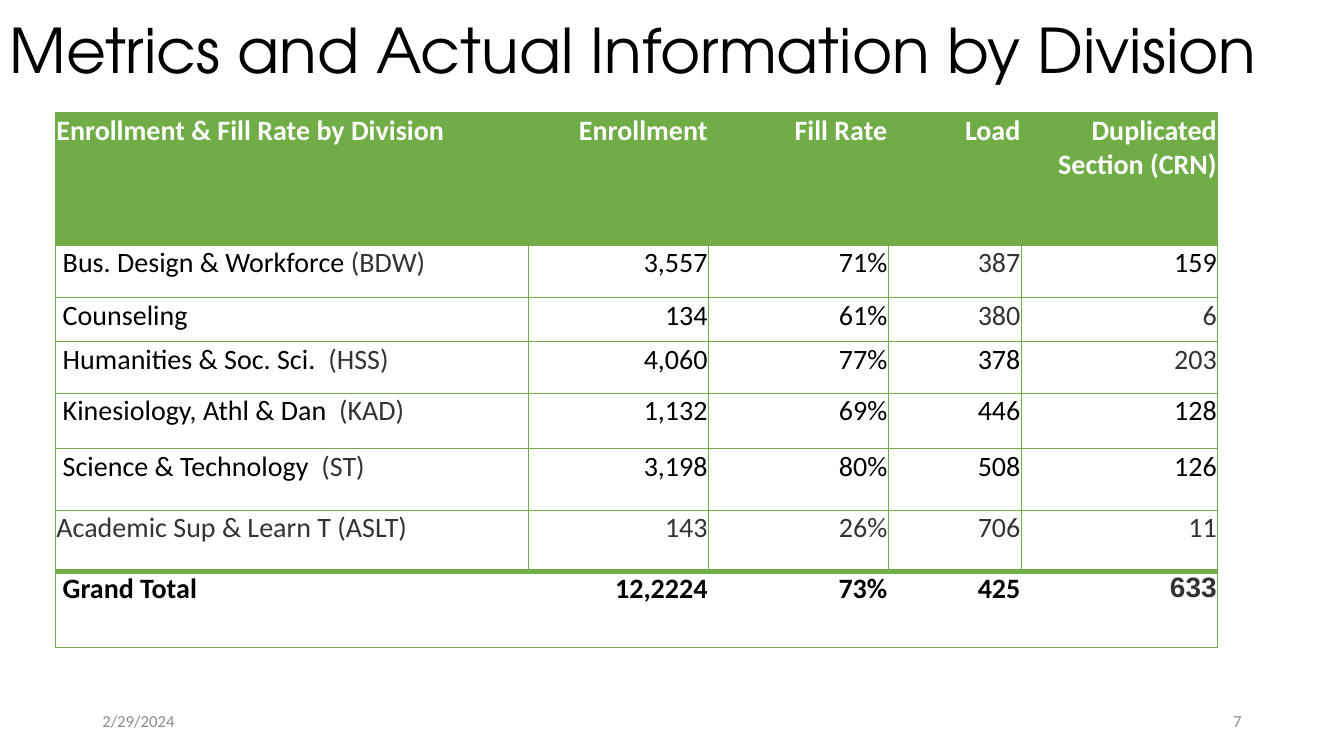
from dataclasses import dataclass

from lxml import etree
from pptx import Presentation
from pptx import util as u
from pptx.dml.color import RGBColor
from pptx.enum import text as t
from pptx.oxml import ns

GREEN = RGBColor(0x70, 0xAD, 0x47)
WHITE = RGBColor(0xFF, 0xFF, 0xFF)
BLACK = RGBColor(0x00, 0x00, 0x00)
CHARCOAL = RGBColor(0x33, 0x33, 0x33)
GRAY = RGBColor(0x8C, 0x8C, 0x8C)

LEFT, RIGHT = t.PP_ALIGN.LEFT, t.PP_ALIGN.RIGHT
THIN, THICK = 0.5, 4
INSET = 0.72


@dataclass(frozen=True)
class Span:
    text: str
    color: RGBColor = BLACK
    size: float = 20
    font: str = "Calibri"
    bold: bool = False


@dataclass(frozen=True)
class Label:
    left: float
    top: float
    width: float
    height: float
    span: Span
    align: t.PP_ALIGN = LEFT
    line_spacing: float = 1.0


@dataclass(frozen=True)
class Row:
    height: float
    cells: list[list[Span]]


def dark(text: str) -> Span:
    return Span(text, CHARCOAL)


def heading(text: str) -> Span:
    return Span(text, WHITE, bold=True)


def total(text: str) -> Span:
    return Span(text, bold=True)


LABELS = [
    Label(0, -3.6, 960, 83.5,
          Span("Metrics and Actual Information by Division", BLACK, 44, "TeX Gyre Adventor"),
          line_spacing=0.9),
    Label(66, 500.5, 216, 28.8, Span("2/29/2024", GRAY, 12)),
    Label(678, 500.5, 216, 28.8, Span("7", GRAY, 12), RIGHT),
]

TABLE_LEFT, TABLE_TOP = 39.6, 80.5
COLUMN_WIDTHS = [337.9, 128.7, 128.4, 95, 140.3]
ROWS = [
    Row(94.5, [[heading(name)] for name in (
        "Enrollment & Fill Rate by Division", "Enrollment", "Fill Rate", "Load",
        "Duplicated Section (CRN)")]),
    Row(37.4, [[Span(" Bus. Design & Workforce"), dark(" (BDW)")],
               [Span("3,557")], [Span("71%")], [dark("387")], [Span("159")]]),
    Row(31.5, [[Span(" Counseling")],
               [Span("134")], [Span("61%")], [dark("380")], [dark("6")]]),
    Row(37, [[Span(" Humanities & Soc. Sci. "), dark(" (HSS)")],
             [Span("4,060")], [Span("77%")], [Span("378")], [dark("203")]]),
    Row(39.4, [[Span(" Kinesiology, Athl & Dan "), dark(" (KAD)")],
               [Span("1,132")], [Span("69%")], [Span("446")], [Span("128")]]),
    Row(44.2, [[Span(" Science & Technology "), dark(" (ST)")],
               [Span("3,198")], [Span("80%")], [Span("508")], [Span("126")]]),
    Row(43.6, [[dark(value)] for value in (
        "Academic Sup & Learn T (ASLT)", "143", "26%", "706", "11")]),
    Row(54, [[total(" Grand Total")], [total("12,2224")], [total("73%")], [total("425")],
             [Span("633", CHARCOAL, font="Arial", bold=True)]]),
]


def write(paragraph, spans: list[Span], align: t.PP_ALIGN) -> None:
    paragraph.alignment = align
    for span in spans:
        run = paragraph.add_run()
        run.text = span.text
        run.font.name = span.font
        run.font.size = u.Pt(span.size)
        run.font.bold = span.bold
        run.font.color.rgb = span.color


def add_label(slide, label: Label) -> None:
    box = slide.shapes.add_textbox(
        u.Pt(label.left), u.Pt(label.top), u.Pt(label.width), u.Pt(label.height))
    frame = box.text_frame
    frame.word_wrap = True
    frame.vertical_anchor = t.MSO_ANCHOR.MIDDLE
    paragraph = frame.paragraphs[0]
    paragraph.line_spacing = label.line_spacing
    write(paragraph, [label.span], label.align)


def set_borders(cell, widths: dict[str, float]) -> None:
    """Draw the cell's sides in green; a width of zero leaves a side open."""
    properties = cell._tc.get_or_add_tcPr()
    for side, width in widths.items():
        line = etree.SubElement(properties, ns.qn(f"a:ln{side}"), w=str(u.Pt(width)))
        if width:
            fill = etree.SubElement(line, ns.qn("a:solidFill"))
            etree.SubElement(fill, ns.qn("a:srgbClr"), val=str(GREEN))
        else:
            etree.SubElement(line, ns.qn("a:noFill"))


def add_division_table(slide) -> None:
    last_row, last_column = len(ROWS) - 1, len(COLUMN_WIDTHS) - 1
    table = slide.shapes.add_table(
        len(ROWS), len(COLUMN_WIDTHS), u.Pt(TABLE_LEFT), u.Pt(TABLE_TOP),
        u.Pt(sum(COLUMN_WIDTHS)), u.Pt(sum(row.height for row in ROWS))).table
    table.first_row = table.horz_banding = False
    for column, width in zip(table.columns, COLUMN_WIDTHS):
        column.width = u.Pt(width)

    for i, row in enumerate(ROWS):
        table.rows[i].height = u.Pt(row.height)
        inner = 0 if i == last_row else THIN
        for j, spans in enumerate(row.cells):
            cell = table.cell(i, j)
            cell.margin_left = cell.margin_right = cell.margin_top = u.Pt(INSET)
            cell.margin_bottom = u.Pt(0)
            set_borders(cell, {
                "L": THIN if j == 0 else inner,
                "R": THIN if j == last_column else inner,
                "T": THICK if i == last_row else THIN,
                "B": THICK if i == last_row - 1 else THIN,
            })
            if i == 0:
                cell.fill.solid()
                cell.fill.fore_color.rgb = GREEN
            else:
                cell.fill.background()
            write(cell.text_frame.paragraphs[0], spans, LEFT if j == 0 else RIGHT)


def main() -> None:
    presentation = Presentation()
    presentation.slide_width, presentation.slide_height = u.Pt(960), u.Pt(540)
    slide = presentation.slides.add_slide(presentation.slide_layouts[6])

    # Title, date and slide number
    for label in LABELS:
        add_label(slide, label)

    # Enrollment figures by division
    add_division_table(slide)

    presentation.save("out.pptx")


if __name__ == "__main__":
    main()
